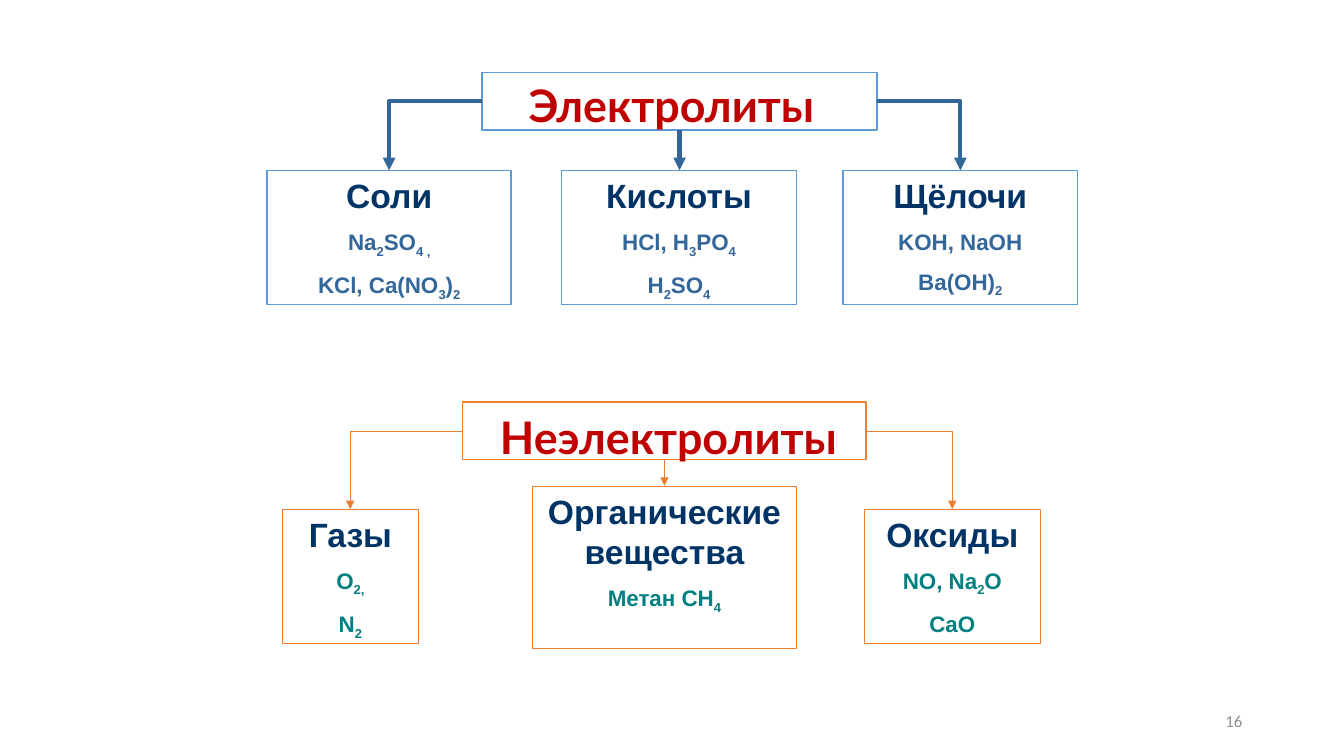
from lxml import etree
from pptx import Presentation
from pptx.dml.color import RGBColor
from pptx.enum.shapes import MSO_CONNECTOR, MSO_SHAPE
from pptx.enum.text import MSO_ANCHOR, PP_ALIGN
from pptx.oxml.ns import qn
from pptx.util import Inches, Pt

WHITE = RGBColor(0xFF, 0xFF, 0xFF)
SKY = RGBColor(0x5B, 0x9B, 0xD5)
STEEL = RGBColor(0x33, 0x66, 0x99)
NAVY = RGBColor(0x00, 0x33, 0x66)
ORANGE = RGBColor(0xED, 0x7D, 0x31)
TEAL = RGBColor(0x00, 0x80, 0x80)
RED = RGBColor(0xC0, 0x00, 0x00)
GREY = RGBColor(0x8C, 0x8C, 0x8C)

TITLE = dict(name="Lato", size=Pt(32), bold=True)
HEADING = dict(name="Arial", size=Pt(24), bold=True)
FORMULA = dict(name="Arial", size=Pt(16), bold=True)
NUMBER = dict(name="Calibri", size=Pt(12))


def add_run(p, text, fmt, color):
    r = p.add_run()
    r.text = text
    for key, value in fmt.items():
        setattr(r.font, key, value)
    r.font.color.rgb = color
    return r


def add_formula(p, formula, color):
    for i, part in enumerate(formula.split("_")):
        if part:
            r = add_run(p, part, FORMULA, color)
            if i % 2:
                r.font._element.set("baseline", "-25000")


def add_box(s, place, line, width, fill=None):
    sp = s.shapes.add_shape(MSO_SHAPE.RECTANGLE, *map(Inches, place))
    sp.shadow.inherit = False
    if fill is None:
        sp.fill.background()
    else:
        sp.fill.solid()
        sp.fill.fore_color.rgb = fill
    sp.line.color.rgb = line
    sp.line.width = Pt(width)
    return sp


def add_class(s, place, heading, formulas, color, line, width, fill=None):
    tf = add_box(s, place, line, width, fill).text_frame
    tf.word_wrap = True
    tf.vertical_anchor = MSO_ANCHOR.TOP
    p = tf.paragraphs[0]
    p.alignment = PP_ALIGN.CENTER
    add_run(p, heading, HEADING, NAVY)
    for formula in formulas:
        p = tf.add_paragraph()
        p.alignment = PP_ALIGN.CENTER
        p.space_before = Pt(9)
        add_formula(p, formula, color)


def add_arrow(s, start, end, color, width):
    straight = start[0] == end[0]
    kind = MSO_CONNECTOR.STRAIGHT if straight else MSO_CONNECTOR.ELBOW
    c = s.shapes.add_connector(kind, *map(Inches, start + end))
    c.line.color.rgb = color
    c.line.width = Pt(width)
    spPr = c._element.spPr
    if not straight:
        spPr.find(qn("a:prstGeom")).set("prst", "bentConnector2")
    etree.SubElement(spPr.find(qn("a:ln")), qn("a:tailEnd"), type="triangle")
    etree.SubElement(spPr, qn("a:effectLst"))


def add_label(s, place, text, fmt, color, align, spacing=None):
    tf = s.shapes.add_textbox(*map(Inches, place)).text_frame
    tf.word_wrap = True
    tf.vertical_anchor = MSO_ANCHOR.MIDDLE
    p = tf.paragraphs[0]
    p.alignment = align
    p.line_spacing = spacing
    add_run(p, text, fmt, color)


def add_tree(s, root, title, title_place, classes, color, line, width,
             arrow_color, arrow_width, fill=None):
    for place, heading, formulas in classes:
        add_class(s, place, heading, formulas, color, line, width, fill)
    add_box(s, root, line, 1, WHITE)
    x, y, w, h = root
    middle = y + h / 2
    starts = [(x, middle), (x + w / 2, y + h), (x + w, middle)]
    for start, (place, _, _) in zip(starts, classes):
        left, top, box_width, _ = place
        end_x = start[0] if start[1] > middle else left + box_width / 2
        add_arrow(s, start, (end_x, top), arrow_color, arrow_width)
    add_label(s, title_place, title, TITLE, RED, PP_ALIGN.CENTER, 1.5)


def main():
    prs = Presentation()
    prs.slide_width, prs.slide_height = Inches(13.33), Inches(7.5)
    s = prs.slides.add_slide(prs.slide_layouts[6])

    electrolytes = [
        ((2.65, 1.69, 2.42, 1.33), "Cоли",
         ["Na_2_SO_4 ,_", "KCl, Ca(NO_3_)_2_"]),
        ((5.57, 1.69, 2.33, 1.33), "Кислоты",
         ["HCl, H_3_PO_4_", "H_2_SO_4_"]),
        ((8.36, 1.69, 2.33, 1.33), "Щёлочи",
         ["KOH, NaOH", "Ba(OH)_2_"]),
    ]
    add_tree(s, (4.78, 0.72, 3.92, 0.57), "Электролиты",
             (4.65, 0.5, 4.02, 0.81), electrolytes, STEEL, SKY, 1,
             STEEL, 3, WHITE)

    nonelectrolytes = [
        ((2.8, 5.05, 1.35, 1.33), "Газы", ["O_2,_", "N_2_"]),
        ((5.28, 4.82, 2.62, 1.61), "Органические вещества",
         ["Метан CH_4_"]),
        ((8.57, 5.05, 1.75, 1.33), "Оксиды", ["NO, Na_2_O", "CaO"]),
    ]
    add_tree(s, (4.59, 3.99, 4, 0.57), "Неэлектролиты",
             (4.62, 3.74, 4.02, 0.91), nonelectrolytes, TEAL, ORANGE, 0.5,
             ORANGE, 0.5)

    add_label(s, (9.42, 6.95, 3, 0.4), "16", NUMBER, GREY, PP_ALIGN.RIGHT)
    prs.save("out.pptx")


if __name__ == "__main__":
    main()
